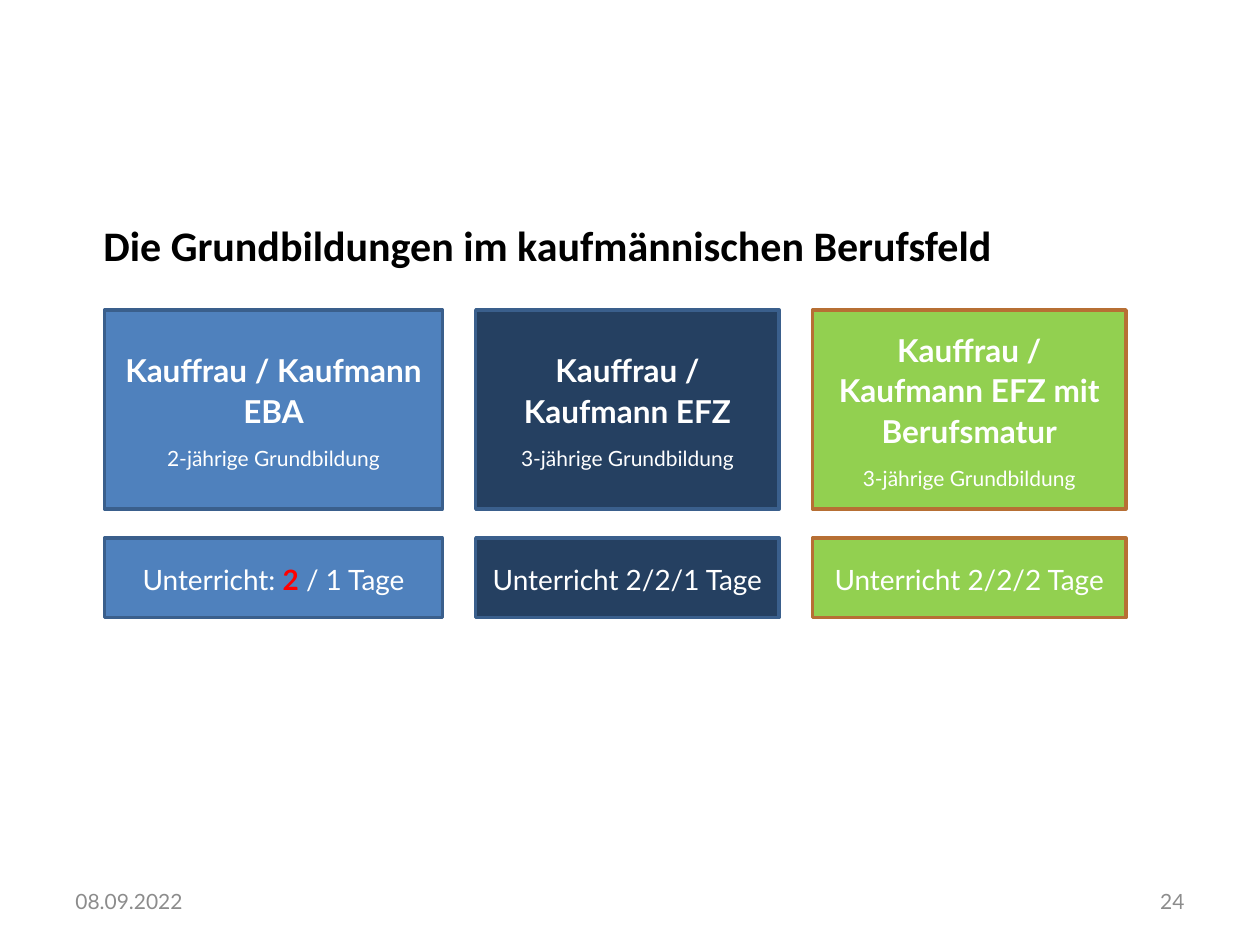
from dataclasses import dataclass

from pptx import Presentation
from pptx.dml.color import RGBColor
from pptx.enum.shapes import MSO_SHAPE
from pptx.enum.text import MSO_ANCHOR, MSO_AUTO_SIZE, PP_ALIGN
from pptx.slide import Slide
from pptx.text.text import TextFrame
from pptx.util import Cm, Pt

RECTANGLE = MSO_SHAPE.RECTANGLE
TOP, MIDDLE = MSO_ANCHOR.TOP, MSO_ANCHOR.MIDDLE
LEFT, CENTER, RIGHT = PP_ALIGN.LEFT, PP_ALIGN.CENTER, PP_ALIGN.RIGHT

BLACK = RGBColor(0x00, 0x00, 0x00)
WHITE = RGBColor(0xFF, 0xFF, 0xFF)
RED = RGBColor(0xFF, 0x00, 0x00)
GRAY = RGBColor(0x8C, 0x8C, 0x8C)
BLUE = RGBColor(0x4F, 0x81, 0xBD)
NAVY = RGBColor(0x25, 0x40, 0x61)
GREEN = RGBColor(0x92, 0xD0, 0x50)
BLUE_BORDER = RGBColor(0x3A, 0x5F, 0x8C)
BROWN_BORDER = RGBColor(0xB7, 0x6F, 0x34)

# Layout in centimetres
COLUMNS_LEFT, COLUMN_GAP = 2.11, 0.67
PROFILE_TOP, PROFILE_HEIGHT = 6.25, 4.01
LESSONS_TOP, LESSONS_HEIGHT = 10.85, 1.6
FOOTER_TOP, FOOTER_WIDTH, FOOTER_HEIGHT = 17.65, 5.92, 1.02


@dataclass(frozen=True)
class Run:
    text: str
    size: float
    bold: bool = False
    color: RGBColor = WHITE


@dataclass(frozen=True)
class Training:
    title: str
    duration: str
    lessons: list[Run]
    width: float
    fill: RGBColor
    border: RGBColor


TRAININGS = [
    Training("Kauffrau / Kaufmann EBA", "2-jährige Grundbildung",
             [Run("Unterricht: ", 16), Run("2", 16, True, RED), Run(" / 1 Tage", 16)],
             6.81, BLUE, BLUE_BORDER),
    Training("Kauffrau / Kaufmann EFZ", "3-jährige Grundbildung",
             [Run("Unterricht 2/2/1 Tage", 16)], 6.12, NAVY, BLUE_BORDER),
    Training("Kauffrau / Kaufmann EFZ mit Berufsmatur", "3-jährige Grundbildung",
             [Run("Unterricht 2/2/2 Tage", 16)], 6.32, GREEN, BROWN_BORDER),
]


def write_text(frame: TextFrame, paragraphs: list[list[Run]], *, font: str = "Lato",
               align: PP_ALIGN = LEFT, anchor: MSO_ANCHOR = MIDDLE, wrap: bool = True,
               line_spacing: float = 1.0, space_after: float = 0) -> None:
    frame.word_wrap = wrap
    frame.auto_size = MSO_AUTO_SIZE.NONE
    frame.vertical_anchor = anchor
    for index, runs in enumerate(paragraphs):
        paragraph = frame.add_paragraph() if index else frame.paragraphs[0]
        paragraph.alignment = align
        paragraph.line_spacing = line_spacing
        paragraph.space_after = Pt(space_after)
        for part in runs:
            run = paragraph.add_run()
            run.text = part.text
            run.font.name = font
            run.font.size = Pt(part.size)
            run.font.bold = part.bold
            run.font.color.rgb = part.color


def add_box(slide: Slide, training: Training, left: float, top: float,
            height: float, paragraphs: list[list[Run]]) -> None:
    box = slide.shapes.add_shape(RECTANGLE, Cm(left), Cm(top), Cm(training.width), Cm(height))
    box.shadow.inherit = False
    box.fill.solid()
    box.fill.fore_color.rgb = training.fill
    box.line.color.rgb = training.border
    box.line.width = Pt(2)
    write_text(box.text_frame, paragraphs, align=CENTER, line_spacing=1.07, space_after=8)


def add_footer(slide: Slide, text: str, left: float, align: PP_ALIGN) -> None:
    footer = slide.shapes.add_textbox(Cm(left), Cm(FOOTER_TOP), Cm(FOOTER_WIDTH), Cm(FOOTER_HEIGHT))
    write_text(footer.text_frame, [[Run(text, 12, color=GRAY)]], align=align)


def main() -> None:
    presentation = Presentation()
    presentation.slide_width, presentation.slide_height = Cm(25.4), Cm(19.05)
    title_only = presentation.slide_layouts[5]
    slide = presentation.slides.add_slide(title_only)

    # Title
    title = slide.shapes.title
    title.left, title.top, title.width, title.height = Cm(1.83), Cm(4.29), Cm(18.47), Cm(1.27)
    write_text(title.text_frame,
               [[Run("Die Grundbildungen im kaufmännischen Berufsfeld", 24, True, BLACK)]],
               font="Calibri", anchor=TOP, wrap=False)

    # One column per training: profile above, lessons below
    left = COLUMNS_LEFT
    for training in TRAININGS:
        profile = [[Run(training.title, 18, True)], [Run(training.duration, 12)]]
        add_box(slide, training, left, PROFILE_TOP, PROFILE_HEIGHT, profile)
        add_box(slide, training, left, LESSONS_TOP, LESSONS_HEIGHT, [training.lessons])
        left += training.width + COLUMN_GAP

    # Date and page number
    add_footer(slide, "08.09.2022", 1.27, LEFT)
    add_footer(slide, "24", 18.21, RIGHT)

    presentation.save("out.pptx")


if __name__ == "__main__":
    main()
